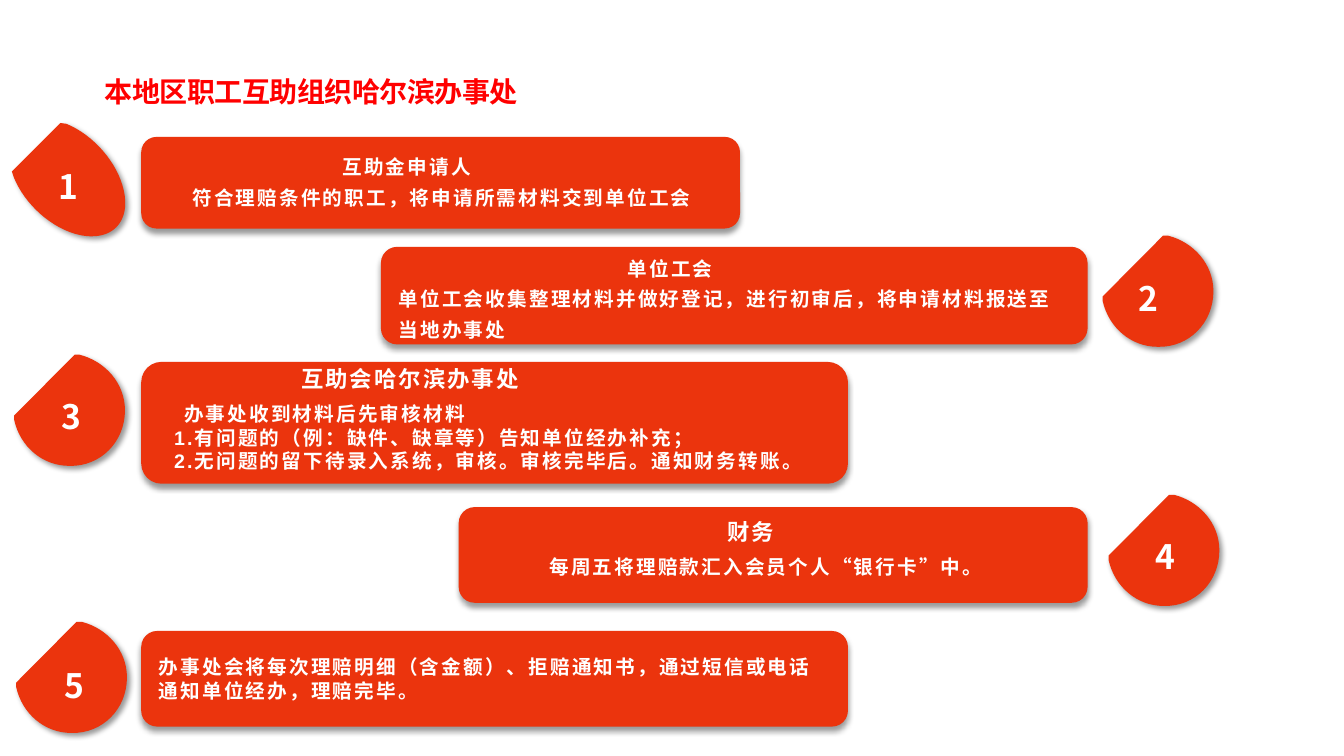
from lxml import etree
from pptx import Presentation
from pptx.dml.color import RGBColor
from pptx.enum.shapes import MSO_SHAPE
from pptx.enum.text import MSO_ANCHOR, PP_ALIGN
from pptx.oxml.ns import qn
from pptx.util import Cm, Pt

ROUND = MSO_SHAPE.ROUNDED_RECTANGLE
MIDDLE, TOP = MSO_ANCHOR.MIDDLE, MSO_ANCHOR.TOP
JUSTIFY, LEFT = PP_ALIGN.JUSTIFY, PP_ALIGN.LEFT

RED, BRIGHT, WHITE = "EB340D", "FF0000", "FFFFFF"
NOTO = "Noto Sans CJK SC"

# Text styles: font values, letter spacing in points
TITLE = ({"name": NOTO, "size": Pt(20), "bold": True}, BRIGHT, -0.4)
NUMBER = ({"name": NOTO, "size": Pt(24), "bold": True}, WHITE, 0)
HEAD = ({"name": "Arial", "size": Pt(16), "bold": True}, WHITE, 1.5)
BODY = ({"name": "Arial", "size": Pt(14), "bold": True}, WHITE, 1.5)

# Panels in cm: left, top, width, height, top inset, line spacing,
# lines as (indent, text)
PANELS = [
    (3.56, 3.45, 15.09, 2.31, 0.18, 1, []),
    (9.6, 6.22, 17.81, 2.46, 0.18, 1.3, [
        (5.77, "单位工会"),
        (0, "单位工会收集整理材料并做好登记，进行初审后，将申请材料报送至当地办事处")]),
    (3.56, 9.12, 17.81, 3.07, 0.18, 1, []),
    (11.56, 12.78, 15.85, 2.41, 0.75, 1, [
        (1.84, "每周五将理赔款汇入会员个人“银行卡”中。")]),
    (3.56, 15.9, 17.81, 2.41, 0.18, 1, [
        (0, "办事处会将每次理赔明细（含金额）、拒赔通知书，通过短信或电话通知单位经办，理赔完毕。")]),
]

# Text boxes in cm: left, top, width, height, style, line spacing, lines
NOTES = [
    (4.6, 3.61, 13.51, 1.8, BODY, 1.3, [
        (3.78, "互助金申请人"),
        (0, "符合理赔条件的职工，将申请所需材料交到单位工会")]),
    (7.34, 9.07, 7.75, 0.94, HEAD, 1, [(0, "互助会哈尔滨办事处")]),
    (4.14, 10.01, 16.23, 2.06, BODY, 1, [
        (0.25, "办事处收到材料后先审核材料"),
        (0, "1.有问题的（例：缺件、缺章等）告知单位经办补充；"),
        (0, "2.无问题的留下待录入系统，审核。审核完毕后。通知财务转账。")]),
    (18.08, 12.93, 5.03, 0.94, HEAD, 1, [(0, "财务")]),
]

# Drop outlines relative to their start: curves have three points, lines one
OVAL = [[(-0.15, -0.69), (-0.76, -1.4), (-1.45, -1.68)],
        [(-1.6, -1.7)], [(-2.82, -0.48)], [(-2.77, -0.33)],
        [(-2.49, 0.36), (-1.8, 0.97), (-1.12, 1.12)],
        [(-0.3, 1.3), (0.18, 0.79), (0, 0)]]
DISC = [[(0, -0.69), (-0.51, -1.24), (-1.14, -1.4)],
        [(-1.27, -1.4)], [(-2.79, 0.13)], [(-2.79, 0.25)],
        [(-2.64, 0.91), (-2.08, 1.4), (-1.4, 1.4)],
        [(-0.61, 1.42), (0, 0.79), (0, 0)]]

# Drops in cm: outline, start point, left and top of the number
DROPS = [
    (OVAL, 3.12, 4.8, 1.22, 4.06),
    (DISC, 30.58, 7.34, 28.45, 6.88),
    (DISC, 3.15, 10.34, 1.3, 9.86),
    (DISC, 30.73, 13.87, 28.88, 13.39),
    (DISC, 3.2, 17.07, 1.37, 16.64),
]


def color(code):
    return RGBColor.from_string(code)


def glow(angle):
    """Return an effect list with one soft drop shadow."""
    effects = etree.Element(qn("a:effectLst"))
    shade = etree.SubElement(effects, qn("a:outerShdw"), blurRad=str(Pt(4)),
                             dist=str(Pt(3)), dir=str(angle * 60000),
                             algn="tl", rotWithShape="0")
    tint = etree.SubElement(shade, qn("a:srgbClr"), val="000000")
    etree.SubElement(tint, qn("a:alpha"), val="40000")
    return effects


def paint(shape, angle):
    """Fill a shape red, without outline, with a shadow."""
    shape.shadow.inherit = False
    shape.fill.solid()
    shape.fill.fore_color.rgb = color(RED)
    shape.line.fill.background()
    props = shape._element.spPr
    props.replace(props.find(qn("a:effectLst")), glow(angle))


def write(frame, lines, style, spacing=1, anchor=TOP, align=LEFT):
    values, ink, gap = style
    frame.word_wrap = True
    frame.vertical_anchor = anchor
    for i, (indent, text) in enumerate(lines):
        para = frame.paragraphs[0] if i == 0 else frame.add_paragraph()
        para.alignment = align
        para.line_spacing = spacing
        para._p.get_or_add_pPr().set("marL", str(Cm(indent)))
        run = para.add_run()
        run.text = text
        for key, value in values.items():
            setattr(run.font, key, value)
        run.font.color.rgb = color(ink)
        props = run._r.get_or_add_rPr()
        props.set("spc", str(round(gap * 100)))
        if values["name"] == NOTO:
            latin = props.find(qn("a:latin"))
            latin.addnext(etree.Element(qn("a:ea"), typeface=NOTO))
    return frame


def label(shapes, box, lines, style, **kw):
    frame = shapes.add_textbox(*map(Cm, box)).text_frame
    return write(frame, lines, style, **kw)


def drop(shapes, outline, x, y):
    """Draw a closed outline whose three-point steps are Bezier curves."""
    points = [(Cm(x + dx), Cm(y + dy)) for step in outline for dx, dy in step]
    pen = shapes.build_freeform(Cm(x), Cm(y))
    pen.add_line_segments(points, close=True)
    shape = pen.convert_to_shape()
    nodes = iter(list(shape._element.iter(qn("a:lnTo"))))
    for step in outline:
        parts = [next(nodes) for _ in step]
        if len(parts) == 3:
            curve = etree.Element(qn("a:cubicBezTo"))
            parts[0].addprevious(curve)
            for part in parts:
                curve.append(part[0])
                part.getparent().remove(part)
    paint(shape, 45)


def main():
    deck = Presentation()
    deck.slide_width, deck.slide_height = Cm(33.87), Cm(19.05)
    shapes = deck.slides.add_slide(deck.slide_layouts[6]).shapes

    title = label(shapes, (2.39, 1.75, 10.97, 1.12),
                  [(0, "本地区职工互助组织哈尔滨办事处")], TITLE, align=JUSTIFY)
    fill = title.paragraphs[0].runs[0]._r.rPr.find(qn("a:solidFill"))
    fill.addnext(glow(45))

    for x, y, w, h, top, spacing, lines in PANELS:
        panel = shapes.add_shape(ROUND, *map(Cm, (x, y, w, h)))
        paint(panel, 90)
        frame = panel.text_frame
        frame.margin_left = frame.margin_right = Cm(0.33)
        frame.margin_top, frame.margin_bottom = Cm(top), Cm(0.18)
        write(frame, lines, BODY, spacing, MIDDLE)

    for number, (outline, x, y, left, top) in enumerate(DROPS, 1):
        drop(shapes, outline, x, y)
        label(shapes, (left, top, 1.24, 1.27), [(0, str(number))], NUMBER)

    for *box, style, spacing, lines in NOTES:
        label(shapes, box, lines, style, spacing=spacing)

    deck.save("out.pptx")


if __name__ == "__main__":
    main()
